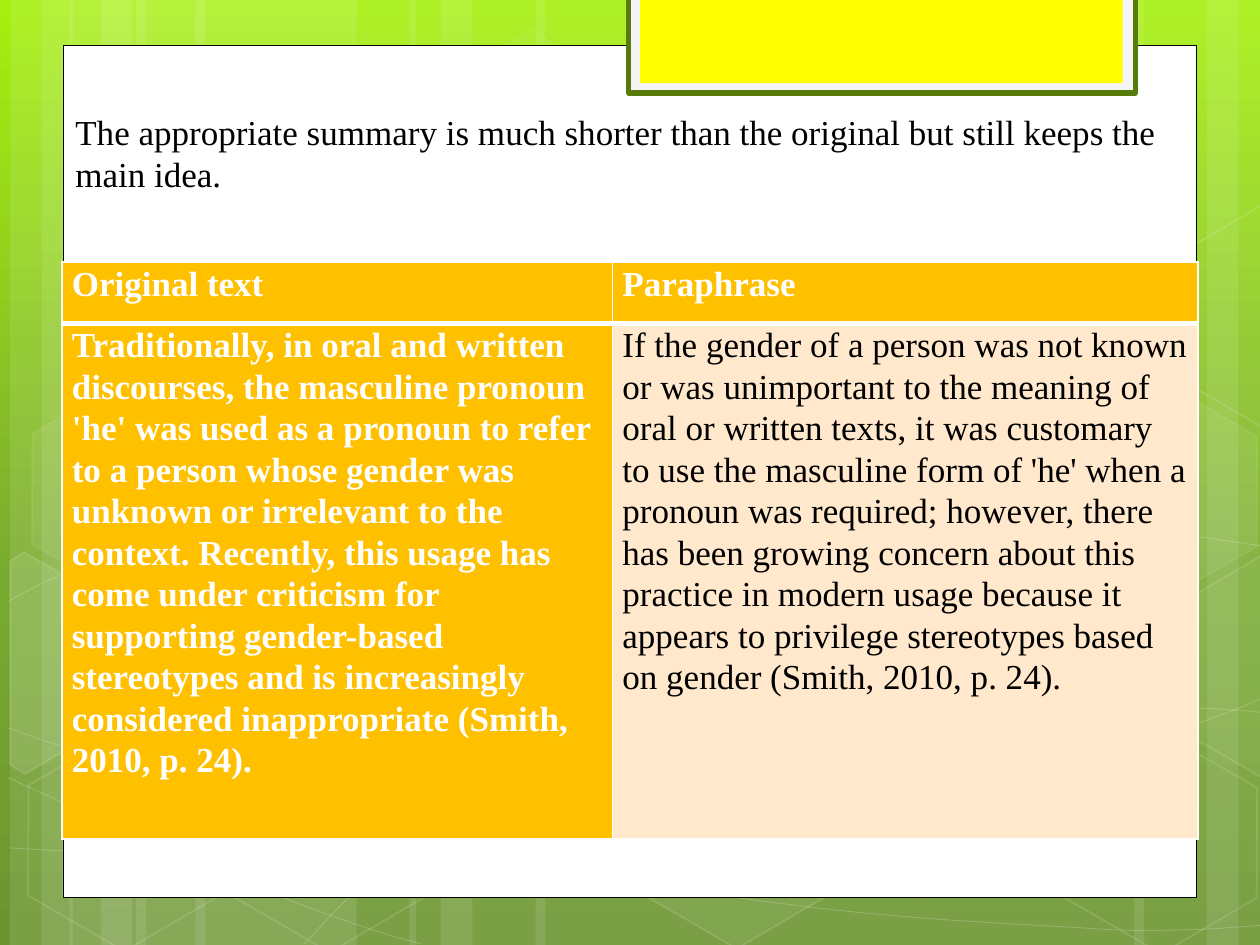
from copy import deepcopy
from dataclasses import dataclass
from math import cos, radians, sin
from typing import Optional

from lxml.etree import SubElement
from pptx import Presentation
from pptx.dml.color import RGBColor as RGB
from pptx.enum.shapes import MSO_SHAPE as SHAPE
from pptx.enum.text import MSO_AUTO_SIZE as AUTO
from pptx.oxml.ns import qn
from pptx.util import Inches, Pt

Point = tuple[float, float]
TILT = 30


@dataclass(frozen=True)
class Theme:
    font: str = "Times New Roman"
    size: float = 20
    white: str = "FFFFFF"
    black: str = "000000"
    tab: str = "F5F5F5"
    tab_line: str = "577C0C"
    yellow: str = "FFFF00"
    gold: str = "FFC000"
    cream: str = "FFE8CC"
    gradient: tuple = ((0, "A5EF0E"), (0.62, "79AA30"), (1, "6C9530"))


@dataclass(frozen=True)
class Paint:
    fill: Optional[str] = None
    fill_alpha: int = 100
    line: Optional[str] = None
    width: float = 1
    line_alpha: int = 100


@dataclass(frozen=True)
class Curve:
    nodes: list[Point]
    straight: Optional[int] = None


@dataclass(frozen=True)
class Hexagon:
    left: float
    top: float
    fill_alpha: int
    line_alpha: int


@dataclass(frozen=True)
class CutHexagon:
    center: Point
    fill_alpha: int
    corners: list[Point]


@dataclass(frozen=True)
class Cell:
    text: str
    fill: str
    color: str
    bold: bool
    top: float
    bottom: float


T = Theme()
STRIPES = [(1.08, 1.75), (0.08, 0.5), (0.33, 0.83), (1.55, 1.75), (0.55, 0.5), (0.8, 0.83),
           (7.33, 1.75), (9.58, 0.5), (9, 0.83), (4.25, 3.08), (3.25, 0.5), (3.5, 0.83)]
CURVES = [
    Curve([(0.07, 6.73), (0.61, 6.76), (1.15, 6.79), (1.9, 6.78), (2.65, 6.77), (3.58, 6.75),
           (4.58, 6.65), (5.58, 6.55), (7, 6.36), (7.92, 6.17), (8.83, 5.98), (9.77, 5.68), (10.07, 5.51)]),
    Curve([(0.07, 4.77), (0.36, 4.61), (0.65, 4.46), (1.21, 4.31), (1.78, 4.16), (2.59, 3.94),
           (3.47, 3.87), (4.36, 3.8), (5.44, 3.79), (6.54, 3.87), (7.64, 3.95), (9.47, 4.26), (10.07, 4.34)]),
    Curve([(0.06, 6.17), (1.27, 6.72), (2.47, 7.27), (3.34, 7.49)]),
    Curve([(0.07, 5.78), (0.38, 5.89), (0.7, 6), (1.28, 6.16), (1.86, 6.31), (2.73, 6.56), (3.57, 6.73),
           (4.4, 6.9), (5.45, 7.08), (6.28, 7.18), (7.11, 7.29), (8, 7.33), (8.53, 7.36),
           (9.05, 7.4), (9.19, 7.38), (9.45, 7.38), (9.71, 7.37), (9.89, 7.35), (10.07, 7.34)]),
    Curve([(2.42, 7.49), (2.6, 7.29), (2.78, 7.09), (3.02, 6.91), (3.26, 6.73), (3.6, 6.53), (3.88, 6.39),
           (4.16, 6.25), (4.33, 6.19), (4.7, 6.09), (5.06, 5.99), (5.73, 5.85), (6.08, 5.78),
           (6.44, 5.71), (6.49, 5.71), (6.8, 5.69), (7.11, 5.66), (7.6, 5.63), (7.94, 5.62),
           (8.29, 5.61), (8.86, 5.62), (8.86, 5.62), (9.53, 5.62), (9.71, 5.63), (9.88, 5.64),
           (9.97, 5.65), (10.06, 5.66), (10.03, 5.65), (10.06, 5.66)], straight=22),
]
HEXAGONS = [Hexagon(3.34, 0.36, 4, 8), Hexagon(4.97, 5.89, 6, 12), Hexagon(0.11, 5.91, 0, 12),
            Hexagon(0.14, 3.12, 7, 8), Hexagon(1.74, 5.92, 0, 12), Hexagon(7.53, 4.53, 10, 12),
            Hexagon(8.34, 5.93, 0, 12), Hexagon(8.34, 3.14, 7, 8)]
CUT_HEXAGONS = [
    CutHexagon((0.36, 5.35), 10, [(0.08, 4.45), (0.19, 4.38), (0.96, 4.82), (0.95, 5.7), (0.2, 6.14), (0.08, 6.07)]),
    CutHexagon((9.85, 5.2), 4, [(9.26, 4.85), (10.01, 4.41), (10.09, 4.46), (10.09, 6.13), (10.02, 6.17), (9.26, 5.73)]),
    CutHexagon((9.85, 2.41), 0, [(9.26, 2.07), (10.01, 1.63), (10.1, 1.68), (10.09, 3.35), (10.02, 3.39), (9.26, 2.95)]),
]
SUMMARY = "The appropriate summary is much shorter than the original but still keeps the main idea."
ORIGINAL = (
    "Traditionally, in oral and written discourses, the masculine pronoun 'he' was used as a pronoun "
    "to refer to a person whose gender was unknown or irrelevant to the context. Recently, this usage "
    "has come under criticism for supporting gender-based stereotypes and is increasingly considered "
    "inappropriate (Smith, 2010, p. 24).")
PARAPHRASE = (
    "If the gender of a person was not known or was unimportant to the meaning of oral or written texts, "
    "it was customary to use the masculine form of 'he' when a pronoun was required; however, there has "
    "been growing concern about this practice in modern usage because it appears to privilege stereotypes "
    "based on gender (Smith, 2010, p. 24).")
ROWS = [
    [Cell("Original text", T.gold, T.white, True, 1, 3), Cell("Paraphrase", T.gold, T.white, True, 1, 3)],
    [Cell(ORIGINAL, T.gold, T.white, True, 3, 1), Cell(PARAPHRASE, T.cream, T.black, False, 3, 1)],
]


def set_color(fill, color: str, alpha: int) -> None:
    fill.solid()
    fill.fore_color.rgb = RGB.from_string(color)
    if alpha < 100:
        for clr in fill._xPr.find(qn("a:solidFill")):
            SubElement(clr, qn("a:alpha"), val=str(alpha * 1000))


def paint(sp, look: Paint) -> None:
    sp.shadow.inherit = False
    if look.fill and look.fill_alpha:
        set_color(sp.fill, look.fill, look.fill_alpha)
    else:
        sp.fill.background()
    if look.line:
        sp.line.width = Pt(look.width)
        set_color(sp.line.fill, look.line, look.line_alpha)
    else:
        sp.line.fill.background()


def add_shape(s, kind, left: float, top: float, width: float, height: float, look: Paint):
    sp = s.shapes.add_shape(kind, Inches(left), Inches(top), Inches(width), Inches(height))
    paint(sp, look)
    return sp


def add_path(s, points: list[Point], close: bool, look: Paint):
    start, *rest = [(Inches(x), Inches(y)) for x, y in points]
    builder = s.shapes.build_freeform(*start)
    builder.add_line_segments(rest, close=close)
    sp = builder.convert_to_shape()
    paint(sp, look)
    return sp


def add_curve(s, curve: Curve) -> None:
    sp = add_path(s, curve.nodes, False, Paint(line=T.white, width=0.5, line_alpha=20))
    path = sp._element.find(".//" + qn("a:path"))
    lines = path.findall(qn("a:lnTo"))
    if curve.straight:
        del lines[curve.straight - 1]
    for first, second, end in zip(lines[::3], lines[1::3], lines[2::3]):
        bezier = SubElement(path, qn("a:cubicBezTo"))
        path.replace(first, bezier)
        for line in (first, second, end):
            bezier.append(line[0])
        path.remove(second)
        path.remove(end)


def add_cut_hexagon(s, h: CutHexagon) -> None:
    (cx, cy), c, d = h.center, cos(radians(TILT)), sin(radians(TILT))
    upright = [(cx + (x - cx) * c + (y - cy) * d, cy + (y - cy) * c - (x - cx) * d) for x, y in h.corners]
    add_path(s, upright, True, Paint(T.white, h.fill_alpha, T.white, 1, 12)).rotation = TILT


def set_font(p, color: str, bold: bool = False) -> None:
    p.font.name, p.font.size, p.font.bold = T.font, Pt(T.size), bold
    p.font.color.rgb = RGB.from_string(color)


def fill_background(s) -> None:
    fill = s.background.fill
    fill.gradient()
    fill.gradient_angle = 270
    stops = s._element.find(".//" + qn("a:gsLst"))
    stops.append(deepcopy(stops[0]))
    for stop, (position, color) in zip(fill.gradient_stops, T.gradient):
        stop.position = position
        stop.color.rgb = RGB.from_string(color)


def fill_cell(cell, data: Cell) -> None:
    cell.margin_left = cell.margin_right = Inches(0.08)
    cell.margin_top = cell.margin_bottom = 0
    tcPr = cell._tc.get_or_add_tcPr()
    for side, width in (("L", 1), ("R", 1), ("T", data.top), ("B", data.bottom)):
        ln = SubElement(tcPr, qn(f"a:ln{side}"), w=str(Pt(width)))
        SubElement(SubElement(ln, qn("a:solidFill")), qn("a:srgbClr"), val=T.white)
    set_color(cell.fill, data.fill, 100)
    cell.text = data.text
    p = cell.text_frame.paragraphs[0]
    p.line_spacing, p.space_after = 1.07, Pt(8)
    set_font(p, data.color, data.bold)


def add_comparison(s) -> None:
    table = s.shapes.add_table(2, 2, Inches(0.49), Inches(2.08), Inches(9.02), Inches(4.58)).table
    table.first_row = table.horz_banding = False
    for col, width in zip(table.columns, (4.37, 4.65)):
        col.width = Inches(width)
    for row, height, cells in zip(table.rows, (0.49, 4.09), ROWS):
        row.height = Inches(height)
        for cell, data in zip(row.cells, cells):
            fill_cell(cell, data)


def main() -> None:
    """Build the slide that compares a text with its paraphrase."""
    prs = Presentation()
    prs.slide_width, prs.slide_height = Inches(10), Inches(7.5)
    s = prs.slides.add_slide(prs.slide_layouts[6])
    fill_background(s)
    for left, width in STRIPES:
        add_shape(s, SHAPE.RECTANGLE, left, 0, width, 7.5, Paint(T.white, 10))
    for curve in CURVES:
        add_curve(s, curve)
    for h in HEXAGONS:
        look = Paint(T.white, h.fill_alpha, T.white, 1, h.line_alpha)
        sp = add_shape(s, SHAPE.HEXAGON, h.left, h.top, 1.75, 1.52, look)
        sp.rotation = TILT
        sp.adjustments[0], sp.adjustments[1] = 0.285, 1.155
    for cut in CUT_HEXAGONS:
        add_cut_hexagon(s, cut)
    add_shape(s, SHAPE.RECTANGLE, 0.5, 0.36, 9, 6.76, Paint(T.white, line=T.black, width=0.5))
    add_shape(s, SHAPE.RECTANGLE, 4.99, -0.02, 4.02, 0.76, Paint(T.tab, line=T.tab_line, width=3))
    add_shape(s, SHAPE.RECTANGLE, 5.08, -0.02, 3.83, 0.68, Paint(T.yellow))
    tf = s.shapes.add_textbox(Inches(0.5), Inches(0.83), Inches(9), Inches(0.77)).text_frame
    tf.word_wrap, tf.auto_size = True, AUTO.SHAPE_TO_FIT_TEXT
    tf.text = SUMMARY
    set_font(tf.paragraphs[0], T.black)
    add_comparison(s)
    prs.save("out.pptx")


if __name__ == "__main__":
    main()
